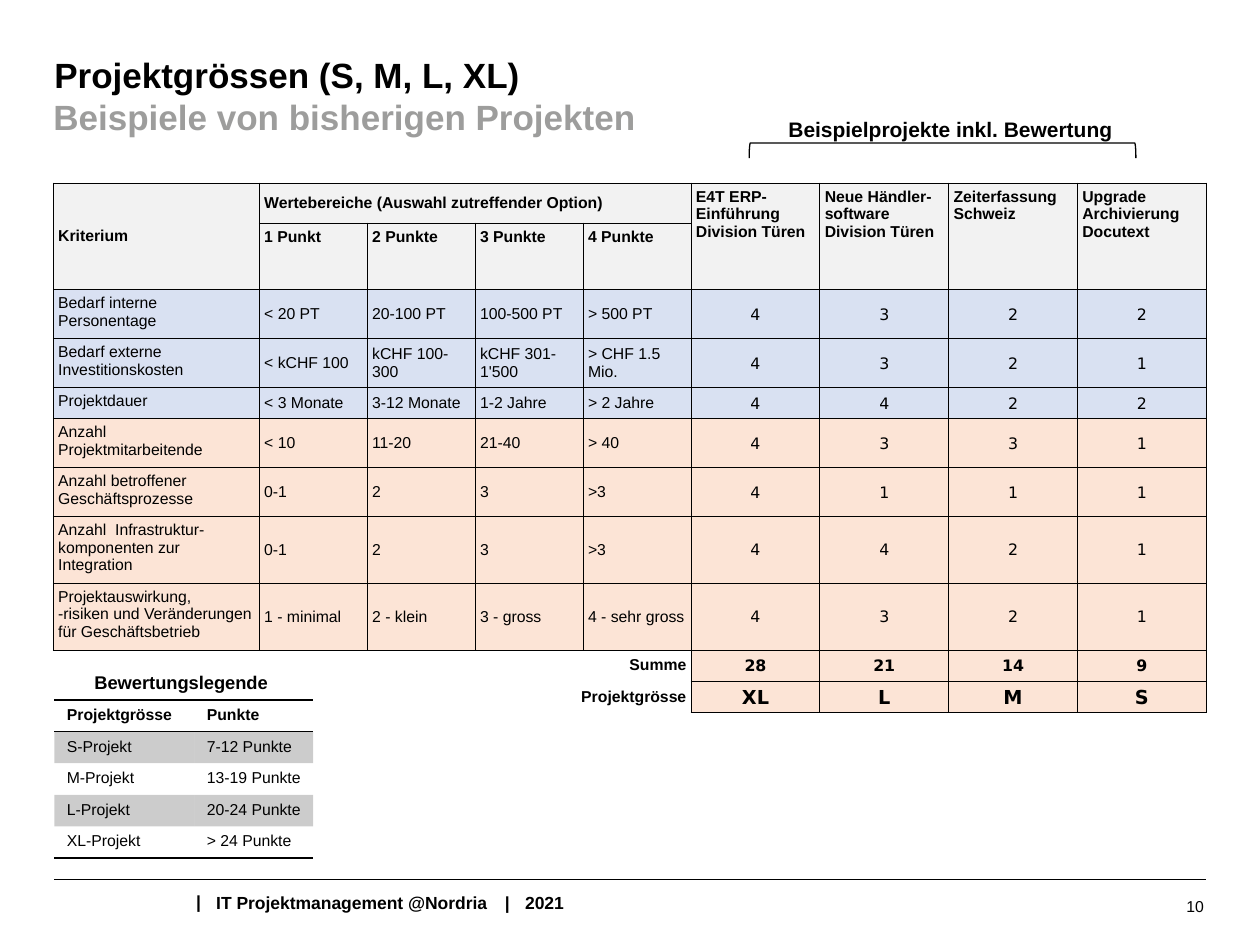
"""Build the slide with the project size scoring table and its legend."""
from lxml.etree import SubElement
from pptx import Presentation
from pptx.dml.color import RGBColor
from pptx.enum.shapes import MSO_CONNECTOR, MSO_SHAPE
from pptx.enum.text import MSO_ANCHOR, PP_ALIGN
from pptx.oxml.ns import qn
from pptx.util import Pt

COLORS = {
    "black": "000000", "gray": "9D9D9C", "header": "F2F2F2",
    "blue": "D9E1F2", "orange": "FCE4D6",
}
NO_STYLE = "{2D5ABB26-0587-4C30-8999-92F81FD0307C}"


def write_text(text_frame, text, size, bold=False, color="black", font="Arial",
               align=PP_ALIGN.LEFT, anchor=MSO_ANCHOR.TOP):
    text_frame.text = text
    text_frame.word_wrap = True
    text_frame.vertical_anchor = anchor
    paragraph = text_frame.paragraphs[0]
    paragraph.alignment = align
    for run in paragraph.runs:
        run.font.size = Pt(size)
        run.font.bold = bold
        run.font.name = font
        run.font.color.rgb = RGBColor.from_string(COLORS[color])
    if not paragraph.runs:
        SubElement(paragraph._p, qn("a:endParaRPr"), sz=str(size * 100))


def set_borders(cell, edges, width):
    properties = cell._tc.get_or_add_tcPr()
    for edge in "LRTB":
        line = SubElement(properties, qn(f"a:ln{edge}"), w=str(Pt(width)))
        if edge in edges:
            fill = SubElement(line, qn("a:solidFill"))
            SubElement(fill, qn("a:srgbClr"), val=COLORS["black"])
        else:
            SubElement(line, qn("a:noFill"))


presentation = Presentation()
presentation.slide_width = Pt(720)
presentation.slide_height = Pt(540)
slide = presentation.slides.add_slide(presentation.slide_layouts[6])

footer_line = slide.shapes.add_connector(
    MSO_CONNECTOR.STRAIGHT, Pt(31), Pt(502.5), Pt(689), Pt(502.5))
footer_line.line.width = Pt(0.75)
footer_line.line.color.rgb = RGBColor.from_string(COLORS["black"])
SubElement(footer_line._element.spPr, qn("a:effectLst"))

labels = [
    ("Projektgrössen (S, M, L, XL)", 31, 27, 658, 28, 0, 3.6, 20, True, "black"),
    ("Beispiele von bisherigen Projekten", 30.5, 51, 658, 28, 0, 3.6, 20, True, "gray"),
    ("Beispielprojekte inkl. Bewertung", 450.5, 66.5, 187, 14.5, 0, 0, 12, True, "black"),
    ("Bewertungslegende", 54, 383.5, 102, 13, 0, 0, 10.5, True, "black"),
    ("|", 105, 505.5, 17.5, 19.5, 7.2, 3.6, 10, True, "black"),
    ("IT Projektmanagement @Nordria\t|\t2021", 116.5, 506, 230, 19.5, 7.2, 3.6, 10, True, "black"),
    ("10", 527, 500.5, 168, 34.5, 7.2, 3.6, 9, False, "black"),
]
for text, left, top, width, height, side, edge, size, bold, color in labels:
    box = slide.shapes.add_textbox(Pt(left), Pt(top), Pt(width), Pt(height))
    text_frame = box.text_frame
    write_text(text_frame, text, size, bold, color)
    text_frame.margin_left = text_frame.margin_right = Pt(side)
    text_frame.margin_top = text_frame.margin_bottom = Pt(edge)
    if "\t" in text:
        tab_list = SubElement(text_frame.paragraphs[0]._p.get_or_add_pPr(), qn("a:tabLst"))
        for position in (165, 176.5):
            SubElement(tab_list, qn("a:tab"), pos=str(Pt(position)), algn="l")
    if text == "10":
        text_frame.vertical_anchor = MSO_ANCHOR.MIDDLE
        text_frame.paragraphs[0].alignment = PP_ALIGN.RIGHT

bracket = slide.shapes.add_shape(
    MSO_SHAPE.LEFT_BRACKET, Pt(534.25), Pt(-24.5), Pt(8.64), Pt(221))
bracket.rotation = 90
bracket.shadow.inherit = False
bracket.fill.background()
bracket.line.width = Pt(0.75)
bracket.line.color.rgb = RGBColor.from_string(COLORS["black"])

scoring_rows = [
    ["Kriterium", "Wertebereiche (Auswahl zutreffender Option)", "", "", "",
     "E4T ERP-Einführung Division Türen", "Neue Händler-software Division Türen",
     "Zeiterfassung Schweiz", "Upgrade Archivierung Docutext"],
    ["", "1 Punkt", "2 Punkte", "3 Punkte", "4 Punkte", "", "", "", ""],
    ["Bedarf interne Personentage", "< 20 PT", "20-100 PT", "100-500 PT", "> 500 PT", *"4322"],
    ["Bedarf externe Investitionskosten", "< kCHF 100", "kCHF 100-300", "kCHF 301-1'500",
     "> CHF 1.5 Mio.", *"4321"],
    ["Projektdauer", "< 3 Monate", "3-12 Monate", "1-2 Jahre", "> 2 Jahre", *"4422"],
    ["Anzahl Projektmitarbeitende", "< 10", "11-20", "21-40", "> 40", *"4331"],
    ["Anzahl betroffener Geschäftsprozesse", "0-1", "2", "3", ">3", *"4111"],
    ["Anzahl  Infrastruktur-komponenten zur Integration", "0-1", "2", "3", ">3", *"4421"],
    ["Projektauswirkung,\v-risiken und Veränderungen für Geschäftsbetrieb",
     "1 - minimal", "2 - klein", "3 - gross", "4 - sehr gross", *"4321"],
    ["", "", "", "Summe", "", "28", "21", "14", "9"],
    ["", "", "", "Projektgrösse", "", "XL", "L", "M", "S"],
]
column_widths = [117.7] + [61.7] * 4 + [73.6] * 4
row_heights = [22.9, 36, 28, 28, 17.8, 28, 28, 37.8, 38.2, 17.8, 18]
scoring_frame = slide.shapes.add_table(
    len(row_heights), len(column_widths), Pt(30.5), Pt(104.5),
    Pt(sum(column_widths)), Pt(sum(row_heights)))
scoring = scoring_frame.table

legend_rows = [
    ("Projektgrösse", "Punkte"), ("S-Projekt", "7-12 Punkte"), ("M-Projekt", "13-19 Punkte"),
    ("L-Projekt", "20-24 Punkte"), ("XL-Projekt", "> 24 Punkte"),
]
legend_widths = [80, 68]
legend_heights = [18.05] * len(legend_rows)
legend_frame = slide.shapes.add_table(
    len(legend_rows), 2, Pt(31), Pt(400), Pt(sum(legend_widths)), Pt(sum(legend_heights)))
legend = legend_frame.table

for table, widths, heights in ((scoring, column_widths, row_heights),
                               (legend, legend_widths, legend_heights)):
    table.first_row = table.horz_banding = False
    table._tbl.tblPr.find(qn("a:tableStyleId")).text = NO_STYLE
    for column, width in zip(table.columns, widths):
        column.width = Pt(width)
    for row, height in zip(table.rows, heights):
        row.height = Pt(height)

scoring.cell(0, 1).merge(scoring.cell(0, 4))
for column in (0, 5, 6, 7, 8):
    scoring.cell(0, column).merge(scoring.cell(1, column))
for row in (9, 10):
    scoring.cell(row, 3).merge(scoring.cell(row, 4))

for row, texts in enumerate(scoring_rows):
    header, total = row < 2, row > 8
    for column, text in enumerate(texts):
        cell = scoring.cell(row, column)
        score = column > 4 and not header
        top_aligned = (header and (row == 1 or column > 4)) or (column == 0 and not header)
        align = PP_ALIGN.CENTER if score else PP_ALIGN.RIGHT if total else PP_ALIGN.LEFT
        write_text(cell.text_frame, text, 11 if score and row == 10 else 9,
                   header or total, font="DejaVu Sans" if score else "Arial", align=align)
        cell.vertical_anchor = MSO_ANCHOR.TOP if top_aligned else MSO_ANCHOR.MIDDLE
        margin = 0.7 if score else 2.8
        cell.margin_left = cell.margin_right = Pt(margin)
        cell.margin_top = Pt(margin)
        cell.margin_bottom = Pt(0 if score else margin)
        if total and not score:
            set_borders(cell, ("T" if row == 9 else "") + ("R" if column > 2 else ""), 0.5)
            cell.fill.background()
        else:
            set_borders(cell, "LRTB", 0.5)
            cell.fill.solid()
            fill_name = "header" if header else "blue" if row < 5 else "orange"
            cell.fill.fore_color.rgb = RGBColor.from_string(COLORS[fill_name])

legend_edges = {0: "TB", 1: "T", 4: "B"}
for row, texts in enumerate(legend_rows):
    for column, text in enumerate(texts):
        cell = legend.cell(row, column)
        write_text(cell.text_frame, text, 9, row == 0)
        set_borders(cell, legend_edges.get(row, ""), 1)
        if row % 2:
            cell.fill.solid()
            cell.fill.fore_color.rgb = RGBColor.from_string(COLORS["black"])
            fill_color = cell._tc.tcPr.find(qn("a:solidFill")).find(qn("a:srgbClr"))
            SubElement(fill_color, qn("a:alpha"), val="20000")
        else:
            cell.fill.background()

presentation.save("out.pptx")
